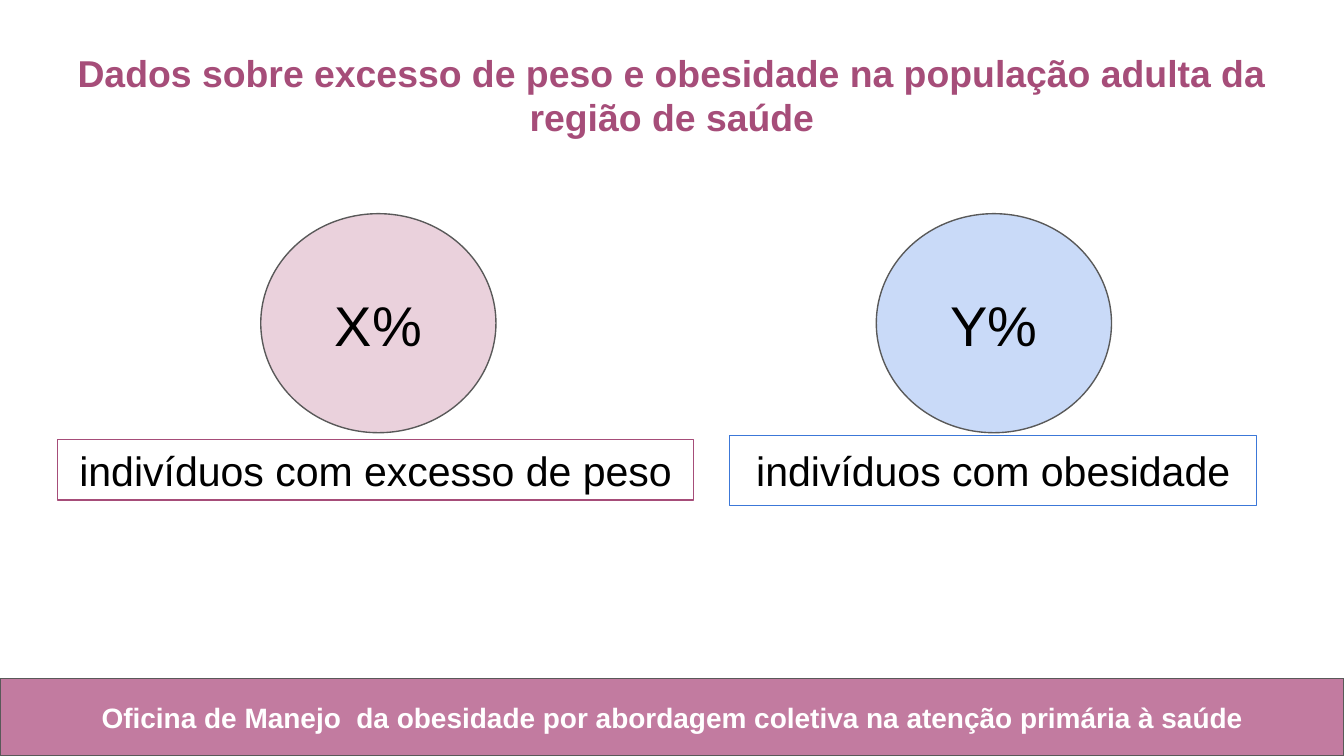
from dataclasses import dataclass
from typing import Optional

from pptx import Presentation
from pptx import util as u
from pptx.dml.color import RGBColor
from pptx.enum import shapes, text

WHITE = RGBColor(0xFF, 0xFF, 0xFF)
BLACK = RGBColor(0x00, 0x00, 0x00)
GRAY = RGBColor(0x59, 0x59, 0x59)
PLUM = RGBColor(0xA6, 0x4D, 0x79)
MAUVE = RGBColor(0xC2, 0x7B, 0xA0)
PINK = RGBColor(0xEA, 0xD1, 0xDC)
BLUE = RGBColor(0x3C, 0x78, 0xD8)
PALE_BLUE = RGBColor(0xC9, 0xDA, 0xF8)

RECTANGLE = shapes.MSO_SHAPE.RECTANGLE
OVAL = shapes.MSO_SHAPE.OVAL
TOP = text.MSO_ANCHOR.TOP
MIDDLE = text.MSO_ANCHOR.MIDDLE


@dataclass
class Area:
    left: float
    top: float
    width: float
    height: float

    def lengths(self) -> tuple:
        return tuple(u.Inches(n) for n in (self.left, self.top, self.width, self.height))


@dataclass
class Indicator:
    """A percentage in a circle, with a framed caption below it."""
    value: str
    caption: str
    circle_left: float
    fill: RGBColor
    frame: RGBColor
    caption_area: Area


INDICATORS = [
    Indicator("X%", "indivíduos com excesso de peso", 1.94, PINK, PLUM,
              Area(0.43, 3.27, 4.73, 0.45)),
    Indicator("Y%", "indivíduos com obesidade", 6.52, PALE_BLUE, BLUE,
              Area(5.43, 3.24, 3.92, 0.52)),
]


def add_box(parent, kind, area: Area, fill: Optional[RGBColor], line: RGBColor):
    box = parent.add_shape(kind, *area.lengths())
    box.shadow.inherit = False
    if fill is None:
        box.fill.background()
    else:
        box.fill.solid()
        box.fill.fore_color.rgb = fill
    box.line.color.rgb = line
    box.line.width = u.Pt(0.75)
    return box


def write(box, words: str, size: float, color: RGBColor, bold: bool = False,
          anchor=MIDDLE) -> None:
    frame = box.text_frame
    margin = u.Inches(0.1)
    frame_format = {"word_wrap": True, "vertical_anchor": anchor,
                    "margin_left": margin, "margin_right": margin,
                    "margin_top": margin, "margin_bottom": margin}
    for name, value in frame_format.items():
        setattr(frame, name, value)
    para = frame.paragraphs[0]
    para.alignment = text.PP_ALIGN.CENTER
    span = para.add_run()
    span.text = words
    for name, value in {"name": "Arial", "size": u.Pt(size), "bold": bold}.items():
        setattr(span.font, name, value)
    span.font.color.rgb = color


def add_indicator(page, item: Indicator) -> None:
    group = page.shapes.add_group_shape()
    circle = Area(item.circle_left, 1.59, 1.75, 1.63)
    add_box(group.shapes, OVAL, circle, item.fill, GRAY)
    value_area = Area(item.circle_left + 0.17, 2, 1.41, 0.82)
    write(group.shapes.add_textbox(*value_area.lengths()), item.value, 30, BLACK)
    caption = add_box(page.shapes, RECTANGLE, item.caption_area, None, item.frame)
    write(caption, item.caption, 22, BLACK)


def main() -> None:
    deck = Presentation()
    deck.slide_width = u.Inches(10)
    deck.slide_height = deck.slide_width * 9 // 16
    page = deck.slides.add_slide(deck.slide_layouts[6])

    add_box(page.shapes, RECTANGLE, Area(0, 5.05, 10, 0.57), MAUVE, GRAY)
    footer = page.shapes.add_textbox(*Area(0.34, 5.11, 9.33, 0.45).lengths())
    write(footer, "Oficina de Manejo  da obesidade por abordagem coletiva "
          "na atenção primária à saúde", 15, WHITE, bold=True, anchor=TOP)
    title = page.shapes.add_textbox(*Area(0.34, 0.27, 9.32, 0.82).lengths())
    write(title, "Dados sobre excesso de peso e obesidade na população adulta "
          "da região de saúde", 20, PLUM, bold=True, anchor=TOP)
    for item in INDICATORS:
        add_indicator(page, item)

    deck.save("out.pptx")


if __name__ == "__main__":
    main()
